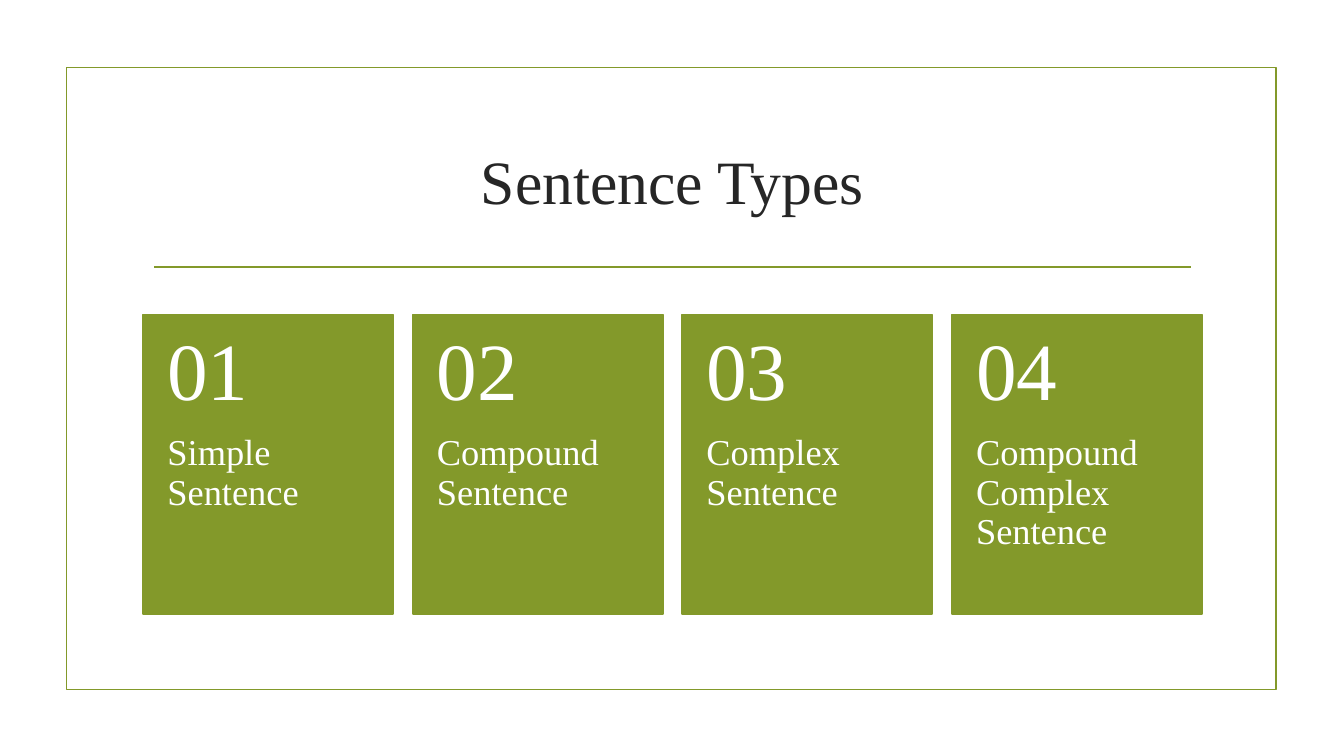
"""Build the Sentence Types slide with four numbered cards."""
import pptx
import pptx.dml.color
import pptx.enum.shapes
import pptx.enum.text
import pptx.oxml
import pptx.util
from pptx.util import Inches

TITLE = "Sentence Types"
SENTENCE_TYPES = [
    "Simple Sentence",
    "Compound Sentence",
    "Complex Sentence",
    "Compound Complex Sentence",
]
COLORS = {"green": "83992A", "title": "262626", "white": "FFFFFF"}
FONT = "Times New Roman"
LINE_WIDTH = 1.25

CONTENT_LEFT, CONTENT_WIDTH = 1.42, 10.5
CARD_TOP, CARD_WIDTH, CARD_HEIGHT = 3.12, 2.48, 2.97
NUMBER_HEIGHT = 1.19
CARD_PITCH = (CONTENT_WIDTH - CARD_WIDTH) / (len(SENTENCE_TYPES) - 1)


def color(name):
    return pptx.dml.color.RGBColor.from_string(COLORS[name])


def style_line(line):
    line.color.rgb = color("green")
    line.width = pptx.util.Pt(LINE_WIDTH)


def add_rectangle(page, bounds, filled):
    shape = page.shapes.add_shape(
        pptx.enum.shapes.MSO_SHAPE.RECTANGLE, *map(Inches, bounds))
    shape.shadow.inherit = False
    if filled:
        shape.fill.solid()
        shape.fill.fore_color.rgb = color("green")
    else:
        shape.fill.background()
    style_line(shape.line)


def add_text(page, bounds, text, size, ink, margins, anchor, align, spacing):
    box = page.shapes.add_textbox(*map(Inches, bounds))
    frame = box.text_frame
    frame.word_wrap = True
    frame.vertical_anchor = anchor
    (frame.margin_left, frame.margin_top,
     frame.margin_right, frame.margin_bottom) = map(Inches, margins)
    frame.text = text
    para = frame.paragraphs[0]
    para.alignment = align
    para.line_spacing = spacing
    para.font.size = pptx.util.Pt(size)
    span = para.runs[0]
    span.font.name = FONT
    span.font.size = pptx.util.Pt(size)
    span.font.color.rgb = color(ink)


def add_rule(page):
    rule = page.shapes.add_connector(
        pptx.enum.shapes.MSO_CONNECTOR.STRAIGHT,
        Inches(1.53), Inches(2.65), Inches(11.81), Inches(2.65))
    style_line(rule.line)
    properties = rule.element.spPr
    properties.append(pptx.oxml.parse_xml(
        '<a:effectLst xmlns:a='
        '"http://schemas.openxmlformats.org/drawingml/2006/main"/>'))


def add_card(page, index, label):
    anchors, aligns = pptx.enum.text.MSO_ANCHOR, pptx.enum.text.PP_ALIGN
    left = CONTENT_LEFT + index * CARD_PITCH
    add_rectangle(page, (left, CARD_TOP, CARD_WIDTH, CARD_HEIGHT), True)
    add_text(page,
             (left, CARD_TOP + NUMBER_HEIGHT, CARD_WIDTH, CARD_HEIGHT - NUMBER_HEIGHT),
             label, 26, "white", (0.24, 0, 0.24, 0.36),
             anchors.TOP, aligns.LEFT, 0.9)
    add_text(page, (left, CARD_TOP, CARD_WIDTH, NUMBER_HEIGHT),
             f"{index + 1:02d}", 58, "white", (0.24, 0.18, 0.24, 0.18),
             anchors.MIDDLE, aligns.LEFT, 0.9)


def main():
    deck = pptx.Presentation()
    deck.slide_width, deck.slide_height = Inches(13.33), Inches(7.5)
    page = deck.slides.add_slide(deck.slide_layouts[6])
    add_rectangle(page, (0.66, 0.67, 12, 6.17), False)
    add_rule(page)
    add_text(page, (CONTENT_LEFT, 1.07, CONTENT_WIDTH, 1.43),
             TITLE, 44, "title", (0.1, 0.05, 0.1, 0.05),
             pptx.enum.text.MSO_ANCHOR.MIDDLE,
             pptx.enum.text.PP_ALIGN.CENTER, 1.0)
    for index, label in enumerate(SENTENCE_TYPES):
        add_card(page, index, label)
    deck.save("out.pptx")


if __name__ == "__main__":
    main()
